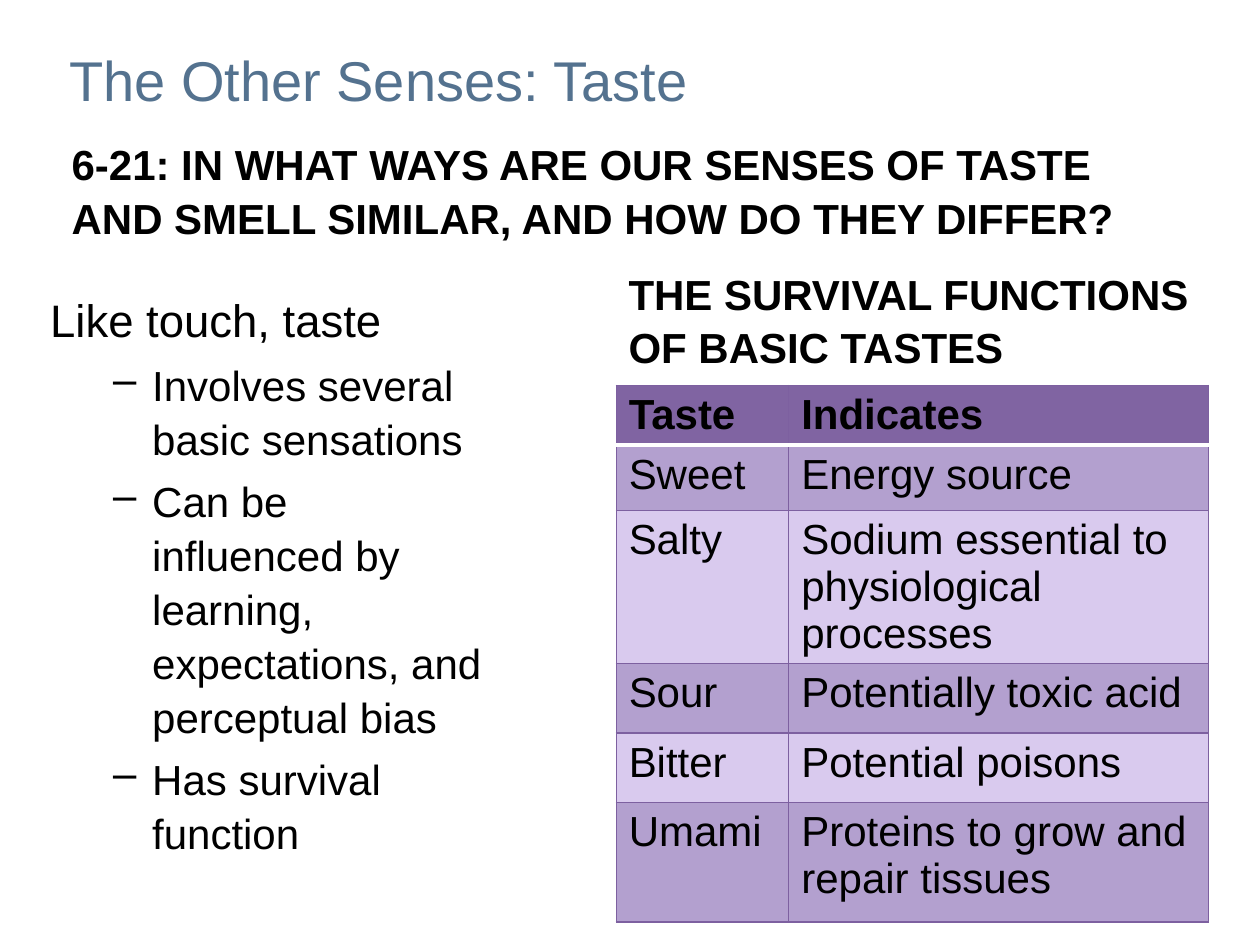
import pptx
import pptx.dml.color
import pptx.enum.text
import pptx.oxml
import pptx.oxml.ns
import pptx.util
from pptx.util import Inches

RGBColor = pptx.dml.color.RGBColor
BLACK = RGBColor(0x00, 0x00, 0x00)
WHITE = RGBColor(0xFF, 0xFF, 0xFF)
TITLE_BLUE = RGBColor(0x54, 0x72, 0x8F)
HEADER_PURPLE = RGBColor(0x80, 0x64, 0xA2)
BORDER_PURPLE = RGBColor(0x7D, 0x60, 0xA0)
DARK_BAND = RGBColor(0xB3, 0xA0, 0xCF)
LIGHT_BAND = RGBColor(0xD9, 0xCA, 0xEE)

FONT = "Arial"
LINE_SPACING = 1.07

TASTES = [
    ("Taste", "Indicates"),
    ("Sweet", "Energy source"),
    ("Salty", "Sodium essential to physiological processes"),
    ("Sour", "Potentially toxic acid"),
    ("Bitter", "Potential poisons"),
    ("Umami", "Proteins to grow and repair tissues"),
]
COLUMN_WIDTHS = [1.37, 3.33]
ROW_HEIGHTS = [0.41, 0.52, 0.95, 0.55, 0.55, 0.95]

TASTE_POINTS = [
    "Involves several basic sensations",
    "Can be influenced by learning, expectations, and perceptual bias",
    "Has survival function",
]


def format_runs(paragraph, size, color=BLACK, bold=False):
    for run in paragraph.runs:
        run.font.name = FONT
        run.font.size = pptx.util.Pt(size)
        run.font.bold = bold
        run.font.color.rgb = color


def add_text(slide, left, top, width, height, text, size, color=BLACK, bold=False,
             anchor=pptx.enum.text.MSO_ANCHOR.TOP, line_spacing=LINE_SPACING):
    shape = slide.shapes.add_textbox(Inches(left), Inches(top), Inches(width), Inches(height))
    text_frame = shape.text_frame
    text_frame.word_wrap = True
    text_frame.vertical_anchor = anchor
    text_frame.text = text
    paragraph = text_frame.paragraphs[0]
    paragraph.line_spacing = line_spacing
    format_runs(paragraph, size, color, bold)
    return text_frame


def add_bullet(text_frame, text, size):
    paragraph = text_frame.add_paragraph()
    paragraph.text = text
    paragraph.level = 1
    paragraph.line_spacing = LINE_SPACING
    paragraph.space_before = pptx.util.Pt(size * 0.2)
    properties = paragraph._p.get_or_add_pPr()
    properties.set("marL", str(Inches(0.81)))
    properties.set("indent", str(Inches(-0.31)))
    properties.append(pptx.oxml.parse_xml(
        f'<a:buChar {pptx.oxml.ns.nsdecls("a")} char="–"/>'))
    format_runs(paragraph, size)


def set_borders(cell, **special_edges):
    properties = cell._tc.get_or_add_tcPr()
    for position, edge in enumerate("LRTB"):
        color, width = special_edges.get(edge, (BORDER_PURPLE, 0.75))
        properties.insert(position, pptx.oxml.parse_xml(
            f'<a:ln{edge} {pptx.oxml.ns.nsdecls("a")} w="{pptx.util.Pt(width)}">'
            f'<a:solidFill><a:srgbClr val="{color}"/></a:solidFill></a:ln{edge}>'))


def add_taste_table(slide, left, top):
    table = slide.shapes.add_table(
        len(TASTES), len(COLUMN_WIDTHS), Inches(left), Inches(top),
        Inches(sum(COLUMN_WIDTHS)), Inches(sum(ROW_HEIGHTS))).table
    for column, width in zip(table.columns, COLUMN_WIDTHS):
        column.width = Inches(width)
    for row, height in zip(table.rows, ROW_HEIGHTS):
        row.height = Inches(height)

    header_rule = (WHITE, 2)
    special_edges = {0: {"B": header_rule}, 1: {"T": header_rule}}
    for row_index, texts in enumerate(TASTES):
        is_header = row_index == 0
        band = DARK_BAND if row_index % 2 else LIGHT_BAND
        for column_index, text in enumerate(texts):
            cell = table.cell(row_index, column_index)
            cell.text_frame.text = text
            format_runs(cell.text_frame.paragraphs[0], 24, bold=is_header)
            cell.fill.solid()
            cell.fill.fore_color.rgb = HEADER_PURPLE if is_header else band
            set_borders(cell, **special_edges.get(row_index, {}))


def main():
    presentation = pptx.Presentation()
    presentation.slide_width = Inches(10)
    presentation.slide_height = Inches(7.5)
    slide = presentation.slides.add_slide(presentation.slide_layouts[6])

    add_taste_table(slide, 4.89, 3.06)
    add_text(slide, 4.89, 2.05, 4.7, 0.91,
             "THE SURVIVAL FUNCTIONS OF BASIC TASTES", 24, bold=True)
    points = add_text(slide, 0.3, 2.32, 3.63, 4.37, "Like touch, taste", 26, line_spacing=0.9)
    for text in TASTE_POINTS:
        add_bullet(points, text, 24)
    add_text(slide, 0.47, 1.02, 9, 0.84,
             "6-21: IN WHAT WAYS ARE OUR SENSES OF TASTE AND SMELL SIMILAR, "
             "AND HOW DO THEY DIFFER?", 24, bold=True)
    add_text(slide, 0.45, 0, 9, 1.25, "The Other Senses: Taste", 32, TITLE_BLUE,
             anchor=pptx.enum.text.MSO_ANCHOR.MIDDLE, line_spacing=1.0)

    presentation.save("out.pptx")


if __name__ == "__main__":
    main()
